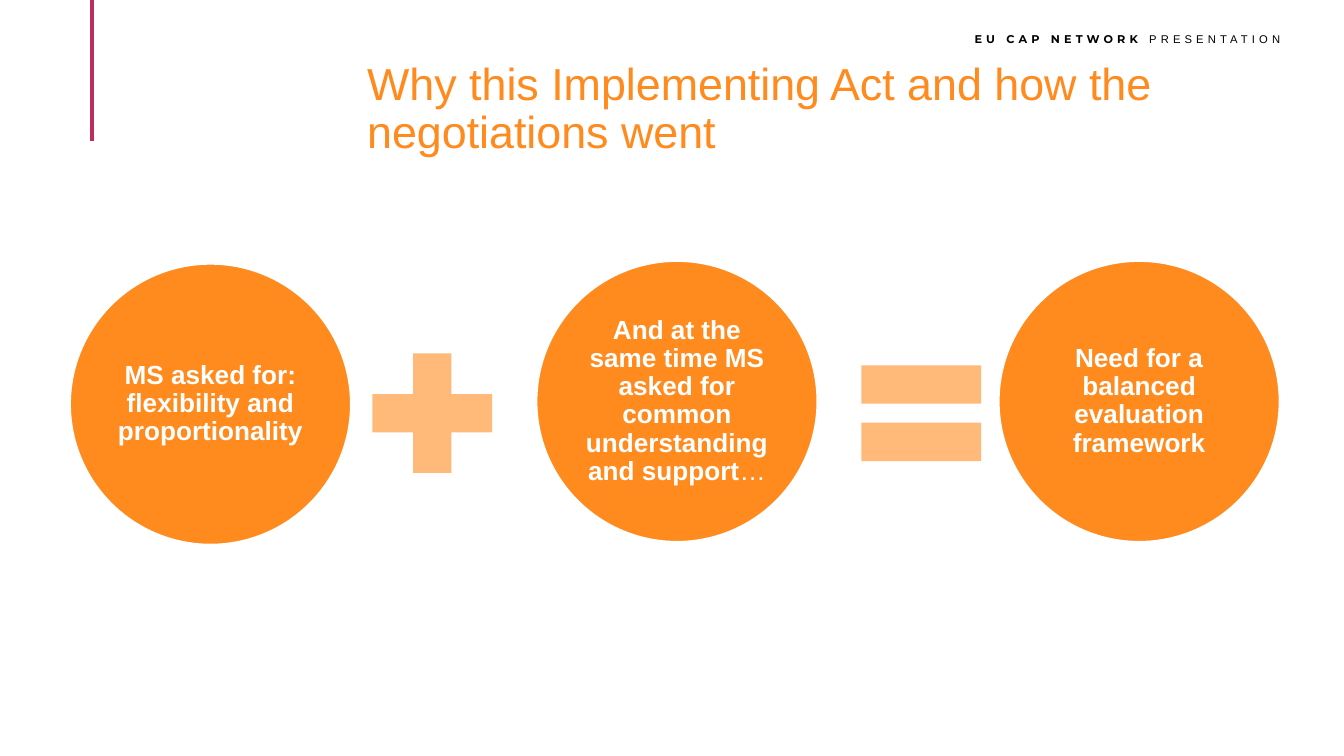
"""Build the slide on why the Implementing Act was needed, as a sum of circles."""
import pptx
import pptx.dml.color
import pptx.enum.shapes
import pptx.enum.text
import pptx.util

Pt = pptx.util.Pt
SHAPE = pptx.enum.shapes.MSO_SHAPE
ALIGN = pptx.enum.text.PP_ALIGN
ANCHOR = pptx.enum.text.MSO_ANCHOR

ORANGE, PEACH, WHITE, BLACK, CRIMSON = "FF8B1F", "FFB979", "FFFFFF", "000000", "BD2C5D"

TITLE = "Why this Implementing Act and how the negotiations went"
HEADER = [
    ("EU CAP NETWORK ", {"name": "Montserrat", "size": Pt(6), "bold": True}),
    ("PRESENTATION", {"name": "Arial", "size": Pt(6), "bold": False}),
]
BOLD = {"name": "Arial", "size": Pt(14), "bold": True}
LIGHT = {**BOLD, "bold": False}
CIRCLES = [
    (37.5, 141.3, [("MS asked for: flexibility and proportionality", BOLD)]),
    (287.4, 139.8, [("And at the same time MS asked for common understanding and support", BOLD),
                    ("…", LIGHT)]),
    (535, 139.8, [("Need for a balanced evaluation framework", BOLD)]),
]
SIGNS = [(SHAPE.MATH_PLUS, 188), (SHAPE.MATH_EQUAL, 450)]
DIAMETER, SIGN_SIZE, SIGN_TOP = 150.5, 87.2, 177.8


def rgb(value):
    return pptx.dml.color.RGBColor.from_string(value)


def assign(target, values):
    for name, value in values.items():
        setattr(target, name, value)


def write(p, runs, color, tracking=None, **layout):
    assign(p, layout)
    for text, font in runs:
        r = p.add_run()
        r.text = text
        assign(r.font, font)
        r.font.color.rgb = rgb(color)
        if tracking:
            r.font._element.set("spc", str(tracking))


def add_shape(s, kind, left, top, size, fill):
    sp = s.shapes.add_shape(kind, Pt(left), Pt(top), Pt(size), Pt(size))
    sp.shadow.inherit = False
    sp.fill.solid()
    sp.fill.fore_color.rgb = rgb(fill)
    sp.line.fill.background()
    return sp


def add_header(s):
    line = s.shapes.add_connector(
        pptx.enum.shapes.MSO_CONNECTOR.STRAIGHT, Pt(49.5), 0, Pt(49.5), Pt(75.6))
    line.line.color.rgb = rgb(CRIMSON)
    line.line.width = Pt(2.25)
    line._element.spPr.get_or_add_effectLst() if hasattr(
        line._element.spPr, "get_or_add_effectLst") else None
    tf = s.shapes.add_textbox(Pt(363), Pt(13.7), Pt(329.8), Pt(14.4)).text_frame
    tf.word_wrap = True
    write(tf.paragraphs[0], HEADER, BLACK, tracking=220, alignment=ALIGN.RIGHT)


def add_title(s):
    sp = s.shapes.title
    assign(sp, {"left": Pt(189.5), "top": Pt(10), "width": Pt(530.5), "height": Pt(75)})
    tf = sp.text_frame
    assign(tf, {"word_wrap": True, "vertical_anchor": ANCHOR.BOTTOM, "margin_bottom": 0,
                "auto_size": pptx.enum.text.MSO_AUTO_SIZE.NONE})
    write(tf.paragraphs[0], [(TITLE, {"name": "Arial", "size": Pt(24)})], ORANGE,
          alignment=ALIGN.LEFT, line_spacing=0.9)


def add_circle(s, left, top, runs):
    sp = add_shape(s, SHAPE.OVAL, left, top, DIAMETER, ORANGE)
    sp.line.color.rgb = rgb(WHITE)
    sp.line.width = Pt(1)
    tf = sp.text_frame
    assign(tf, {"word_wrap": True, "vertical_anchor": ANCHOR.MIDDLE})
    assign(tf, {f"margin_{side}": Pt(1.4) for side in ("left", "top", "right", "bottom")})
    write(tf.paragraphs[0], runs, WHITE, alignment=ALIGN.CENTER, line_spacing=0.9)


def main():
    prs = pptx.Presentation()
    prs.slide_width, prs.slide_height = Pt(720), Pt(405)
    s = prs.slides.add_slide(prs.slide_layouts[5])
    add_header(s)
    add_title(s)
    for kind, left in SIGNS:
        add_shape(s, kind, left, SIGN_TOP, SIGN_SIZE, PEACH)
    for left, top, runs in CIRCLES:
        add_circle(s, left, top, runs)
    prs.save("out.pptx")


if __name__ == "__main__":
    main()
